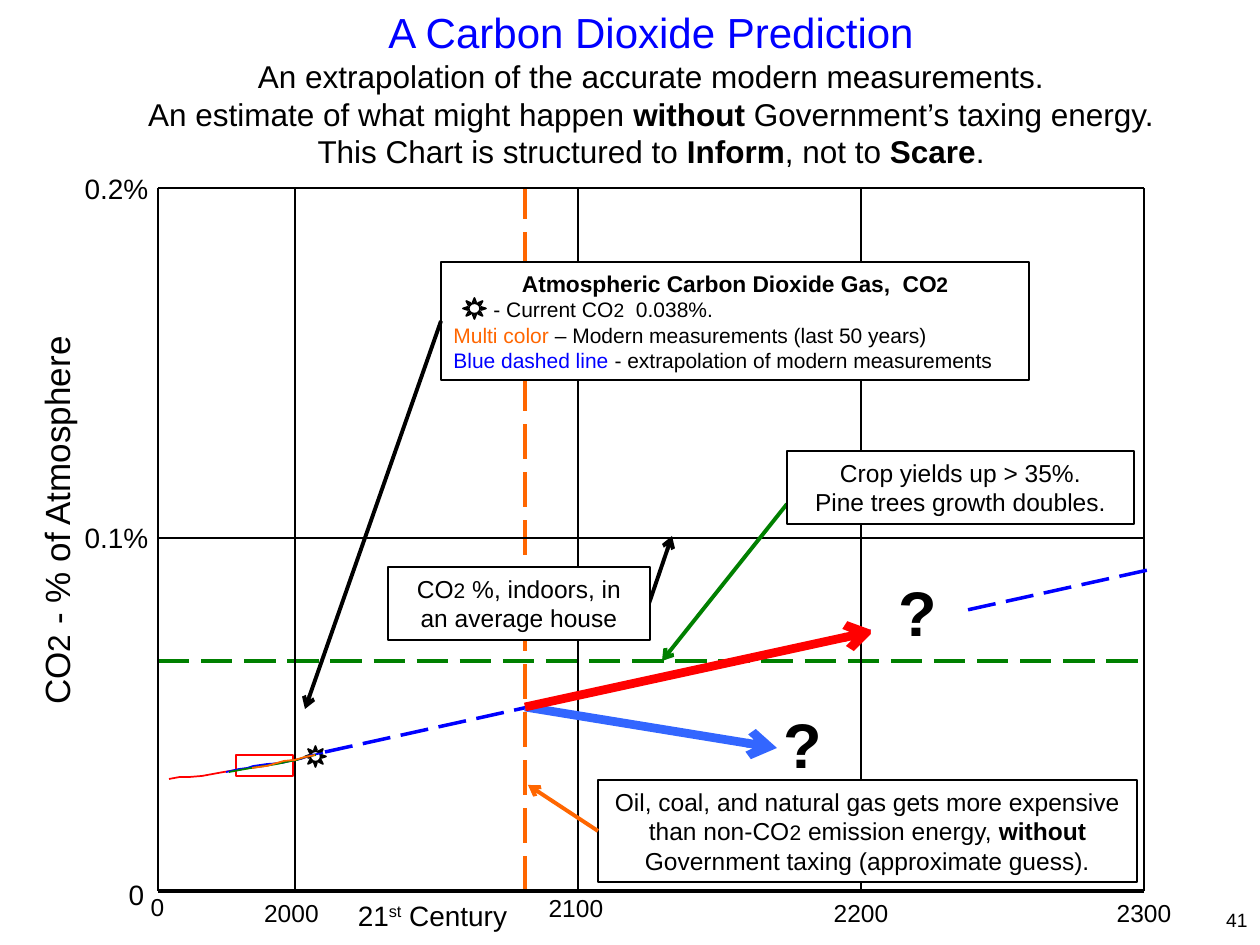
from dataclasses import dataclass
from typing import NamedTuple

from pptx import Presentation
from pptx.dml.color import RGBColor
from pptx.enum.dml import MSO_LINE
from pptx.enum.shapes import MSO_CONNECTOR, MSO_SHAPE
from pptx.enum.text import MSO_ANCHOR, MSO_AUTO_SIZE, PP_ALIGN
from pptx.oxml.ns import qn
from pptx.util import Emu, Inches, Pt
from lxml import etree

EMU_PER_PX = 914400 / 126
FONT = "Arial"
BLACK = RGBColor(0x00, 0x00, 0x00)
WHITE = RGBColor(0xFF, 0xFF, 0xFF)
RED = RGBColor(0xFF, 0x00, 0x00)
GREEN = RGBColor(0x00, 0x80, 0x00)
BLUE = RGBColor(0x00, 0x00, 0xFF)
LIGHT_BLUE = RGBColor(0x33, 0x66, 0xFF)
ORANGE = RGBColor(0xFF, 0x66, 0x00)

# Plot grid
LEFT, TOP, MIDDLE, BOTTOM = 158, 188, 538, 891
YEAR_2000, CENTURY = 295, 283
CENTURY_XS = [YEAR_2000 + CENTURY * index for index in range(4)]
RIGHT = CENTURY_XS[-1]
COSTLY_FUEL_X = 525


class Run(NamedTuple):
    text: str
    size: float
    color: RGBColor = BLACK
    bold: bool = False
    superscript: bool = False


class Box(NamedTuple):
    left: int
    top: int
    width: int
    height: int


@dataclass
class Line:
    start: tuple[int, int]
    end: tuple[int, int]
    color: RGBColor = BLACK
    width: float = 1
    dashed: bool = False
    arrow: bool = False


@dataclass
class Callout:
    box: Box
    paragraphs: list[list[Run]]
    line_width: float = 1


def px(length: float) -> Emu:
    return Emu(round(length * EMU_PER_PX))


def emu_box(box: Box) -> list[Emu]:
    return [px(length) for length in box]


def write(text_frame, paragraphs: list[list[Run]], align=PP_ALIGN.CENTER) -> None:
    text_frame.word_wrap = True
    for index, runs in enumerate(paragraphs):
        paragraph = text_frame.paragraphs[0] if index == 0 else text_frame.add_paragraph()
        paragraph.alignment = align
        for item in runs:
            run = paragraph.add_run()
            run.text = item.text
            run.font.name = FONT
            run.font.size = Pt(item.size)
            run.font.bold = item.bold
            run.font.color.rgb = item.color
            if item.superscript:
                run._r.get_or_add_rPr().set("baseline", "30000")


def add_text(slide, box: Box, runs: list[Run], align=PP_ALIGN.CENTER):
    shape = slide.shapes.add_textbox(*emu_box(box))
    write(shape.text_frame, [runs], align)
    return shape


def add_line(slide, line: Line):
    connector = slide.shapes.add_connector(
        MSO_CONNECTOR.STRAIGHT, *map(px, line.start + line.end))
    connector.line.color.rgb = line.color
    connector.line.width = Pt(line.width)
    if line.dashed:
        connector.line.dash_style = MSO_LINE.LONG_DASH
    if line.arrow:
        etree.SubElement(connector.line._get_or_add_ln(), qn("a:tailEnd"), type="arrow")
    etree.SubElement(connector._element.spPr, qn("a:effectLst"))
    return connector


def paint(shape, color: RGBColor, width: float = 1, fill=None) -> None:
    shape.shadow.inherit = False
    shape.line.color.rgb = color
    shape.line.width = Pt(width)
    if fill is None:
        shape.fill.background()
    else:
        shape.fill.solid()
        shape.fill.fore_color.rgb = fill


def add_outline(slide, kind, box: Box, color=BLACK, width: float = 1, fill=None):
    shape = slide.shapes.add_shape(kind, *emu_box(box))
    paint(shape, color, width, fill)
    return shape


def add_callout(slide, callout: Callout):
    shape = add_outline(slide, MSO_SHAPE.RECTANGLE, callout.box,
                        width=callout.line_width, fill=WHITE)
    write(shape.text_frame, callout.paragraphs)
    return shape


def add_curve(slide, points: list[tuple[int, int]], color: RGBColor) -> None:
    builder = slide.shapes.build_freeform(*points[0], scale=EMU_PER_PX)
    builder.add_line_segments(points[1:], close=False)
    paint(builder.convert_to_shape(), color)


HEADING = [
    [Run("A Carbon Dioxide Prediction", 24, BLUE)],
    [Run("An extrapolation of the accurate modern measurements.", 18)],
    [Run("An estimate of what might happen ", 18), Run("without", 18, bold=True),
     Run(" Government’s taxing energy.", 18)],
    [Run("This Chart is structured to ", 18), Run("Inform", 18, bold=True),
     Run(", not to ", 18), Run("Scare", 18, bold=True), Run(".", 18)],
]
AXIS_LABELS = [
    (Box(110, 871, 53, 47), [Run("0", 16)]),
    (Box(69, 514, 95, 47), [Run("0.1%", 16)]),
    (Box(69, 165, 95, 47), [Run("0.2%", 16)]),
    (Box(131, 886, 53, 42), [Run("0", 14)]),
    (Box(248, 892, 87, 42), [Run("2000", 14)]),
    (Box(513, 887, 126, 42), [Run("2100", 14)]),
    (Box(798, 892, 126, 42), [Run("2200", 14)]),
    (Box(1081, 892, 126, 42), [Run("2300", 14)]),
    (Box(333, 892, 199, 47),
     [Run("21", 16), Run("st", 16, superscript=True), Run(" Century", 16)]),
]
GRID_AND_TRENDS = [
    Line((COSTLY_FUEL_X, BOTTOM), (COSTLY_FUEL_X, TOP), ORANGE, 2.5, dashed=True),
    Line((LEFT, 661), (RIGHT, 661), GREEN, 2.25, dashed=True),
    Line((LEFT, BOTTOM), (RIGHT, BOTTOM), width=2.25),
    *[Line((LEFT, y), (RIGHT, y)) for y in (TOP, MIDDLE)],
    *[Line((x, BOTTOM), (x, TOP)) for x in (LEFT, *CENTURY_XS)],
    Line((325, 752), (1148, 570), BLUE, 2, dashed=True),
    Line((640, 630), (672, 536), width=2.25, arrow=True),
    Line((787, 504), (662, 661), GREEN, 2.25, arrow=True),
]
MEASUREMENTS = [
    (RED, [(314, 755), (300, 759), (273, 764), (261, 766), (243, 769), (224, 772),
           (202, 776), (190, 777), (180, 777), (169, 779)]),
    (BLUE, [(323, 753), (311, 755), (301, 759), (290, 761), (282, 763), (267, 764),
            (253, 766), (247, 768), (239, 769), (226, 772)]),
    (GREEN, [(316, 755), (305, 757), (297, 760), (286, 762), (277, 764), (265, 766),
             (251, 768), (240, 770), (229, 772)]),
    (ORANGE, [(315, 755), (305, 757), (295, 760), (284, 761), (267, 766), (252, 768)]),
]
INDOORS = Callout(Box(388, 567, 262, 73), [
    [Run("CO", 14), Run("2", 12), Run(" %, indoors, in an average house", 14)]])
CROPS = Callout(Box(787, 451, 347, 73), [
    [Run("Crop yields up > 35%.", 14)], [Run("Pine trees growth doubles.", 14)]])
FUEL_COST = Callout(Box(598, 780, 539, 102), [
    [Run("Oil, coal, and natural gas gets more expensive than non-CO", 14),
     Run("2", 12), Run(" emission energy, ", 14), Run("without ", 14, bold=True),
     Run("Government taxing (approximate guess).", 14)]])
LEGEND = Callout(Box(441, 262, 588, 118), [
    [Run("Atmospheric Carbon Dioxide Gas,  CO", 13, bold=True), Run("2", 12, bold=True)],
    [Run("- Current CO", 12), Run("2", 11), Run("  0.038%.", 12)],
    [Run("Multi color", 12, ORANGE), Run(" – Modern measurements (last 50 years)", 12)],
    [Run("Blue dashed line ", 12, BLUE),
     Run("- extrapolation of modern measurements", 12)]], 1.5)


def main() -> None:
    presentation = Presentation()
    presentation.slide_width, presentation.slide_height = Inches(10), Inches(7.5)
    slide = presentation.slides.add_slide(presentation.slide_layouts[5])

    title = slide.shapes.title
    title.left, title.top, title.width, title.height = emu_box(Box(126, 0, 1050, 176))
    title.text_frame.auto_size = MSO_AUTO_SIZE.NONE
    title.text_frame.vertical_anchor = MSO_ANCHOR.TOP
    write(title.text_frame, HEADING)

    axis_title = add_text(slide, Box(-306, 493, 725, 55), [
        Run("CO", 20), Run("2", 18), Run(" - % of Atmosphere", 20)])
    axis_title.rotation = 270

    for line in GRID_AND_TRENDS:
        add_line(slide, line)
    for box, runs in AXIS_LABELS:
        add_text(slide, box, runs)

    add_outline(slide, MSO_SHAPE.SUN, Box(305, 746, 21, 21))
    add_outline(slide, MSO_SHAPE.RECTANGLE, Box(236, 755, 57, 21), RED)
    for color, points in MEASUREMENTS:
        add_curve(slide, points, color)

    add_callout(slide, INDOORS)
    add_callout(slide, CROPS)
    fuel_cost = add_callout(slide, FUEL_COST)
    legend = add_callout(slide, LEGEND)
    entries = legend.text_frame.paragraphs[1:]
    for paragraph in entries:
        paragraph.alignment = PP_ALIGN.LEFT
    entries[0]._p.get_or_add_pPr().set("indent", str(px(40)))
    add_outline(slide, MSO_SHAPE.SUN, Box(463, 298, 23, 21), fill=WHITE)

    for callout, color, end in ((fuel_cost, ORANGE, (528, 785)), (legend, BLACK, (305, 709))):
        pointer = add_line(slide, Line((0, 0), end, color, 2.25, arrow=True))
        pointer.begin_connect(callout, 1)

    for color, end in ((LIGHT_BLUE, (777, 748)), (RED, (874, 631))):
        add_line(slide, Line((COSTLY_FUEL_X, 707), end, color, 5, arrow=True))

    for left, top, covers_trend in ((871, 567, True), (756, 699, False)):
        mark = add_text(slide, Box(left, top, 94, 88), [Run("?", 36, bold=True)])
        mark.text_frame.vertical_anchor = MSO_ANCHOR.BOTTOM
        if covers_trend:
            mark.fill.solid()
            mark.fill.fore_color.rgb = WHITE

    add_text(slide, Box(1187, 902, 73, 43), [Run("41", 11)], PP_ALIGN.RIGHT)
    presentation.save("out.pptx")


if __name__ == "__main__":
    main()
